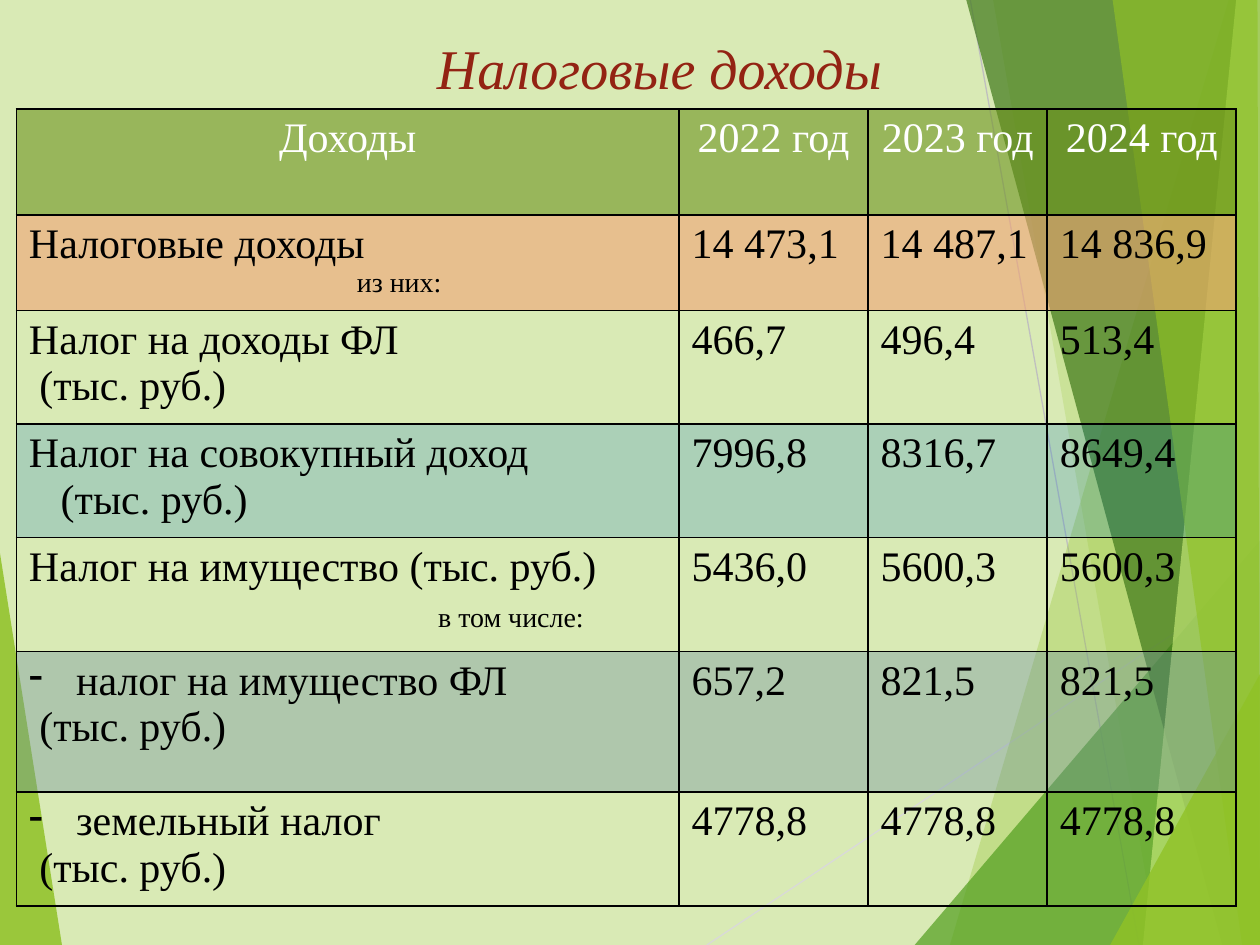
"""Build the tax revenue slide: faceted backdrop, title and table."""
from dataclasses import dataclass

from lxml import etree
from pptx import Presentation
from pptx.dml.color import RGBColor
from pptx.enum.shapes import MSO_CONNECTOR
from pptx.enum.text import MSO_ANCHOR, PP_ALIGN
from pptx.oxml.ns import qn
from pptx.util import Cm, Pt

STRAIGHT = MSO_CONNECTOR.STRAIGHT
MIDDLE = MSO_ANCHOR.MIDDLE
CENTER, LEFT = PP_ALIGN.CENTER, PP_ALIGN.LEFT
FONT = "Times New Roman"
WIDTH, HEIGHT = 25.4, 19.05
BOTTOM_RIGHT, TOP_RIGHT = (WIDTH, HEIGHT), (WIDTH, 0)
COLUMN_WIDTHS = (13.36, 3.81, 3.61, 3.81)
BORDERS = ("a:lnL", "a:lnR", "a:lnT", "a:lnB")


@dataclass(frozen=True)
class Facet:
    points: tuple
    color: str
    opacity: int


@dataclass(frozen=True)
class Ray:
    start: tuple
    end: tuple
    color: str


@dataclass(frozen=True)
class Line:
    text: str
    size: int = 24
    indent: float = 0
    before: int = 0
    bullet: str = ""


@dataclass(frozen=True)
class Row:
    label: tuple
    values: tuple
    height: float = 2.29
    fill: str = ""
    opacity: int = 100
    color: str = "000000"
    align: PP_ALIGN = LEFT


def unit_line(indent: float = 0.21) -> Line:
    return Line("(тыс. руб.)", indent=indent)


RAYS = (
    Ray((14.25, HEIGHT), (WIDTH, 11.61), "D9D9D9"),
    Ray((19.56, 0), (22.96, HEIGHT), "BFBFBF"),
)
LEFT_FACET = Facet(((0, 11.15), (1.25, HEIGHT), (0, HEIGHT)), "90C226", 85)
RIGHT_FACETS = (
    Facet(((24.77, 0), (19.15, HEIGHT), BOTTOM_RIGHT, TOP_RIGHT), "90C226", 30),
    Facet(((20.02, 0), (23.34, HEIGHT), BOTTOM_RIGHT, TOP_RIGHT), "90C226", 20),
    Facet(((18.44, HEIGHT), (WIDTH, 10.9), BOTTOM_RIGHT), "54A021", 72),
    Facet(((19.48, 0), (24.64, HEIGHT), BOTTOM_RIGHT, TOP_RIGHT), "3F7819", 70),
    Facet(((24.92, 0), (23.04, HEIGHT), BOTTOM_RIGHT, TOP_RIGHT), "C0E474", 70),
    Facet(((22.43, 0), (25.04, HEIGHT), BOTTOM_RIGHT, (25.35, 0)), "90C226", 65),
    Facet(((22.38, HEIGHT), (WIDTH, 13.59), BOTTOM_RIGHT), "90C226", 80),
)
ROWS = (
    Row((Line("Доходы"),), ("2022 год", "2023 год", "2024 год"),
        2.13, "6C921D", 59, "FFFFFF", CENTER),
    Row((Line("Налоговые доходы"), Line("из них:", 16, 6.61)),
        ("14 473,1", "14 487,1", "14 836,9"), 1.93, "F1A374", 60),
    Row((Line("Налог на доходы ФЛ"), unit_line()), ("466,7", "496,4", "513,4")),
    Row((Line("Налог на совокупный доход"), unit_line(0.64)),
        ("7996,8", "8316,7", "8649,4"), fill="0070C0", opacity=21),
    Row((Line("Налог на имущество (тыс. руб.)"), Line("в том числе:", 16, 8.25, 7)),
        ("5436,0", "5600,3", "5600,3")),
    Row((Line("налог на имущество ФЛ", indent=0.95, bullet="-"), unit_line()),
        ("657,2", "821,5", "821,5"), 2.84, "6E91A0", 39),
    Row((Line("земельный налог", indent=0.95, bullet="-"), unit_line()),
        ("4778,8", "4778,8", "4778,8")),
)


def paint(fill, color: str, opacity: int = 100) -> None:
    fill.solid()
    fill.fore_color.rgb = RGBColor.from_string(color)
    if opacity < 100:
        choice = fill._xPr.find(qn("a:solidFill"))[0]
        etree.SubElement(choice, qn("a:alpha"), val=str(opacity * 1000))


def add_facet(slide, facet: Facet) -> None:
    first, *others = [(Cm(x), Cm(y)) for x, y in facet.points]
    builder = slide.shapes.build_freeform(*first)
    builder.add_line_segments(others, close=True)
    shape = builder.convert_to_shape()
    shape.shadow.inherit = False
    shape.line.fill.background()
    paint(shape.fill, facet.color, facet.opacity)


def add_ray(slide, ray: Ray) -> None:
    connector = slide.shapes.add_connector(
        STRAIGHT, *(Cm(value) for value in ray.start + ray.end))
    paint(connector.line.fill, ray.color)
    connector.line.width = Pt(0.75)
    etree.SubElement(connector._element.spPr, qn("a:effectLst"))


def add_text(paragraph, text: str, size: int, color: str, align: PP_ALIGN):
    paragraph.alignment = align
    run = paragraph.add_run()
    run.text = text
    run.font.name = FONT
    run.font.size = Pt(size)
    paint(run.font.fill, color)
    return run


def add_line(paragraph, line: Line, row: Row) -> None:
    add_text(paragraph, line.text, line.size, row.color, row.align)
    paragraph.space_before = Pt(line.before)
    properties = paragraph._p.get_or_add_pPr()
    properties.set("marL", str(Cm(line.indent)))
    if line.bullet:
        properties.set("indent", str(-Cm(line.indent)))
        etree.SubElement(properties, qn("a:buChar"), char=line.bullet)


def fill_cell(cell, lines: tuple, row: Row) -> None:
    frame = cell.text_frame
    for index, line in enumerate(lines):
        paragraph = frame.add_paragraph() if index else frame.paragraphs[0]
        add_line(paragraph, line, row)
    properties = cell._tc.get_or_add_tcPr()
    for tag in BORDERS:
        border = etree.SubElement(properties, qn(tag), w=str(Pt(1)))
        solid = etree.SubElement(border, qn("a:solidFill"))
        etree.SubElement(solid, qn("a:srgbClr"), val="000000")
    if row.fill:
        paint(cell.fill, row.fill, row.opacity)
    else:
        cell.fill.background()


def add_revenue_table(slide) -> None:
    height = sum(row.height for row in ROWS)
    table = slide.shapes.add_table(
        len(ROWS), len(COLUMN_WIDTHS), Cm(0.33), Cm(2.2),
        Cm(sum(COLUMN_WIDTHS)), Cm(height)).table
    table.first_row = table.horz_banding = False
    for column, width in zip(table.columns, COLUMN_WIDTHS):
        column.width = Cm(width)
    for index, row in enumerate(ROWS):
        table.rows[index].height = Cm(row.height)
        contents = (row.label, *((Line(value),) for value in row.values))
        for position, lines in enumerate(contents):
            fill_cell(table.cell(index, position), lines, row)


def format_title(slide) -> None:
    title = slide.shapes.title
    title.left, title.top = Cm(2.69), Cm(0.53)
    title.width, title.height = Cm(21.21), Cm(1.63)
    frame = title.text_frame
    frame.word_wrap = True
    frame.vertical_anchor = MIDDLE
    run = add_text(frame.paragraphs[0], "Налоговые доходы", 32, "932313", CENTER)
    run.font.italic = True


def main() -> None:
    presentation = Presentation()
    presentation.slide_width, presentation.slide_height = Cm(WIDTH), Cm(HEIGHT)
    slide = presentation.slides.add_slide(presentation.slide_layouts[5])
    paint(slide.background.fill, "D9EAB5")
    add_facet(slide, LEFT_FACET)
    for ray in RAYS:
        add_ray(slide, ray)
    for facet in RIGHT_FACETS:
        add_facet(slide, facet)
    format_title(slide)
    add_revenue_table(slide)
    presentation.save("out.pptx")


if __name__ == "__main__":
    main()
